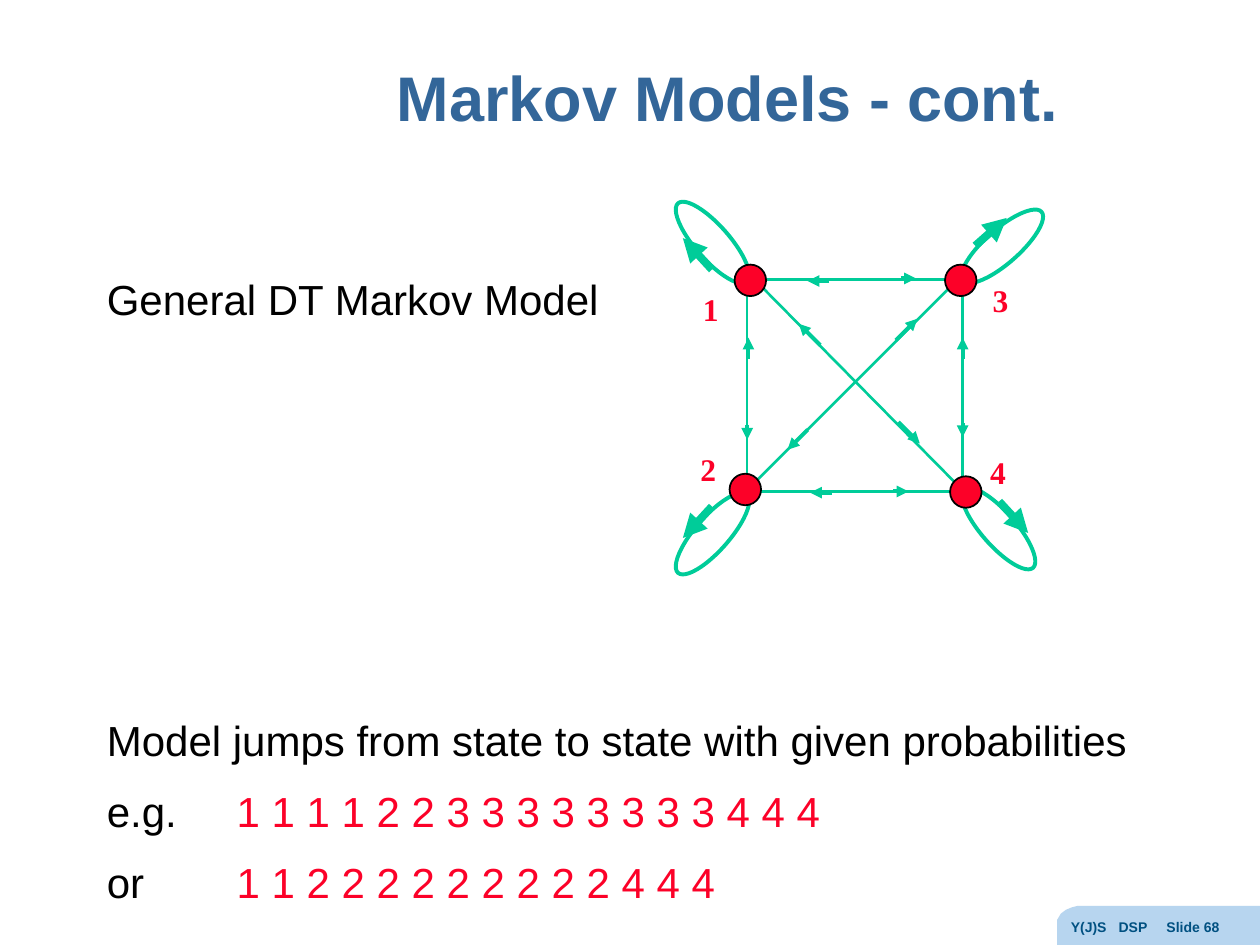
import pptx
import pptx.dml.color
import pptx.enum.shapes
import pptx.enum.text
import pptx.oxml.xmlchemy
import pptx.util

Inches = pptx.util.Inches
Pt = pptx.util.Pt

GREEN, RED, BLACK = "00CC99", "FC0128", "000000"
TITLE_BLUE, FOOTER_BLUE, FOOTER_FILL = "336699", "005081", "B7D5EF"

# state: node corner, label corner, self-loop corner, self-loop angle, self-loop arrow
STATES = {
    "1": ((5.83, 2.1), (5.48, 2.25), (5.24, 1.79), 228.7, (5.65, 2.14, 5.42, 1.89)),
    "2": ((5.79, 3.76), (5.46, 3.52), (5.24, 4.1), 131.3, (5.65, 4.02, 5.42, 4.27)),
    "3": ((7.5, 2.1), (7.78, 2.18), (7.54, 1.82), 318.7, (7.74, 1.95, 7.99, 1.73)),
    "4": ((7.54, 3.78), (7.76, 3.55), (7.51, 4.06), 48.7, (7.93, 3.98, 8.16, 4.23)),
}

LINKS = [
    (6.05, 2.22, 7.57, 2.22), (6.03, 3.9, 7.55, 3.9),
    (5.93, 2.26, 5.93, 3.78), (7.64, 2.31, 7.64, 3.83),
    (6, 3.82, 7.52, 2.3), (7.58, 3.83, 6, 2.23),
]

LINK_ARROWS = [
    (7.15, 2.21, 7.27, 2.21), (6.58, 2.23, 6.41, 2.23),
    (7.09, 3.9, 7.21, 3.9), (6.6, 3.91, 6.43, 3.91),
    (5.93, 3.37, 5.93, 3.49), (5.94, 2.85, 5.94, 2.68),
    (7.64, 3.36, 7.64, 3.47), (7.64, 2.85, 7.64, 2.68),
    (7.11, 2.7, 7.28, 2.53), (6.41, 3.41, 6.25, 3.57),
    (7.13, 3.35, 7.3, 3.52), (6.51, 2.74, 6.34, 2.57),
]

FOOTER_OUTLINE = [
    (10, 7.19), (10, 7.5), (8.39, 7.5), (8.39, 7.34), (8.39, 7.3),
    (8.42, 7.25), (8.46, 7.22), (8.51, 7.2), (8.55, 7.19),
]


def color(hex_text):
    return pptx.dml.color.RGBColor.from_string(hex_text)


def add_xml(parent, tag, **attributes):
    child = pptx.oxml.xmlchemy.OxmlElement(tag)
    for name, value in attributes.items():
        child.set(name, str(value))
    parent.append(child)
    return child


class SlideWriter:
    font = "Arial"

    def __init__(self, page):
        self.page = page

    def format_span(self, span, size, hex_text, bold=False, font=None):
        span.font.name = font or self.font
        span.font.size = Pt(size)
        span.font.bold = bold
        span.font.color.rgb = color(hex_text)

    def title(self, text, left, top, width, height):
        box = self.page.shapes.title
        box.left, box.top = Inches(left), Inches(top)
        box.width, box.height = Inches(width), Inches(height)
        frame = box.text_frame
        frame.text = text
        frame.vertical_anchor = pptx.enum.text.MSO_ANCHOR.MIDDLE
        para = frame.paragraphs[0]
        para.alignment = pptx.enum.text.PP_ALIGN.CENTER
        para.line_spacing = 0.9
        self.format_span(para.runs[0], 36, TITLE_BLUE, bold=True)

    def text(self, lines, left, top, width, height, size, colors,
             bold=False, font=None, space=0, tabs=()):
        """Each line is a list of spans; colors gives one colour per span position."""
        box = self.page.shapes.add_textbox(
            Inches(left), Inches(top), Inches(width), Inches(height))
        frame = box.text_frame
        frame.word_wrap = True
        for index, line in enumerate(lines):
            para = frame.add_paragraph() if index else frame.paragraphs[0]
            para.space_before = Pt(space)
            for words, hex_text in zip(line, colors):
                span = para.add_run()
                span.text = words
                self.format_span(span, size, hex_text, bold, font)
            if tabs:
                stops = add_xml(para._p.get_or_add_pPr(), "a:tabLst")
                for position in tabs:
                    add_xml(stops, "a:tab", pos=Inches(position), algn="l")

    def line(self, ends, width, arrow=False):
        connector = self.page.shapes.add_connector(
            pptx.enum.shapes.MSO_CONNECTOR.STRAIGHT, *map(Inches, ends))
        connector.line.color.rgb = color(GREEN)
        connector.line.width = Pt(width)
        if arrow:
            add_xml(connector.line._get_or_add_ln(), "a:tailEnd", type="triangle")
        add_xml(connector._element.spPr, "a:effectLst")

    def ellipse(self, corner, width, height, outline, weight, fill=None, angle=0):
        shape = self.page.shapes.add_shape(
            pptx.enum.shapes.MSO_SHAPE.OVAL,
            *map(Inches, corner), Inches(width), Inches(height))
        shape.shadow.inherit = False
        shape.rotation = angle
        shape.line.color.rgb = color(outline)
        shape.line.width = Pt(weight)
        if fill:
            shape.fill.solid()
            shape.fill.fore_color.rgb = color(fill)
        else:
            shape.fill.background()

    def outline(self, points, fill):
        corners = [(Inches(x), Inches(y)) for x, y in points]
        builder = self.page.shapes.build_freeform(*corners[0])
        builder.add_line_segments(corners[1:], close=True)
        shape = builder.convert_to_shape()
        shape.shadow.inherit = False
        shape.fill.solid()
        shape.fill.fore_color.rgb = color(fill)
        shape.line.fill.background()


def draw_model(writer):
    for ends in LINKS:
        writer.line(ends, 1.5)
    for ends in LINK_ARROWS:
        writer.line(ends, 2.25, arrow=True)
    for state, (node, label, loop, angle, arrow) in STATES.items():
        writer.ellipse(loop, 0.83, 0.27, GREEN, 2.25, angle=angle)
        writer.line(arrow, 4.5, arrow=True)
        writer.ellipse(node, 0.25, 0.25, BLACK, 1, fill=RED)
        writer.text([[state]], *label, 0.33, 0.4, 18, [RED],
                    bold=True, font="Times New Roman")


def main():
    deck = pptx.Presentation()
    deck.slide_width, deck.slide_height = Inches(10), Inches(7.5)
    writer = SlideWriter(deck.slides.add_slide(deck.slide_layouts[5]))

    writer.outline(FOOTER_OUTLINE, FOOTER_FILL)
    writer.title("Markov Models - cont.", 2.12, 0.18, 7.31, 1.25)
    writer.text([["General DT Markov Model"]], 0.75, 2.12, 4.4, 0.65,
                24, [BLACK], space=11.8)
    writer.text([
        ["Model jumps from state to state with given probabilities"],
        ["e.g.\t", "1 1 1 1 2 2 3 3 3 3 3 3 3 3 4 4 4"],
        ["or\t", "1 1 2 2 2 2 2 2 2 2 2 4 4 4"],
    ], 0.75, 5.62, 8.5, 1.75, 24, [BLACK, RED], space=11.8, tabs=[1.03])
    draw_model(writer)
    writer.text([["Y(J)S\tDSP\tSlide 68"]], 8.4, 7.24, 1.6, 0.26,
                8, [FOOTER_BLUE], bold=True, tabs=[0.38, 0.76])

    deck.save("out.pptx")


if __name__ == "__main__":
    main()
